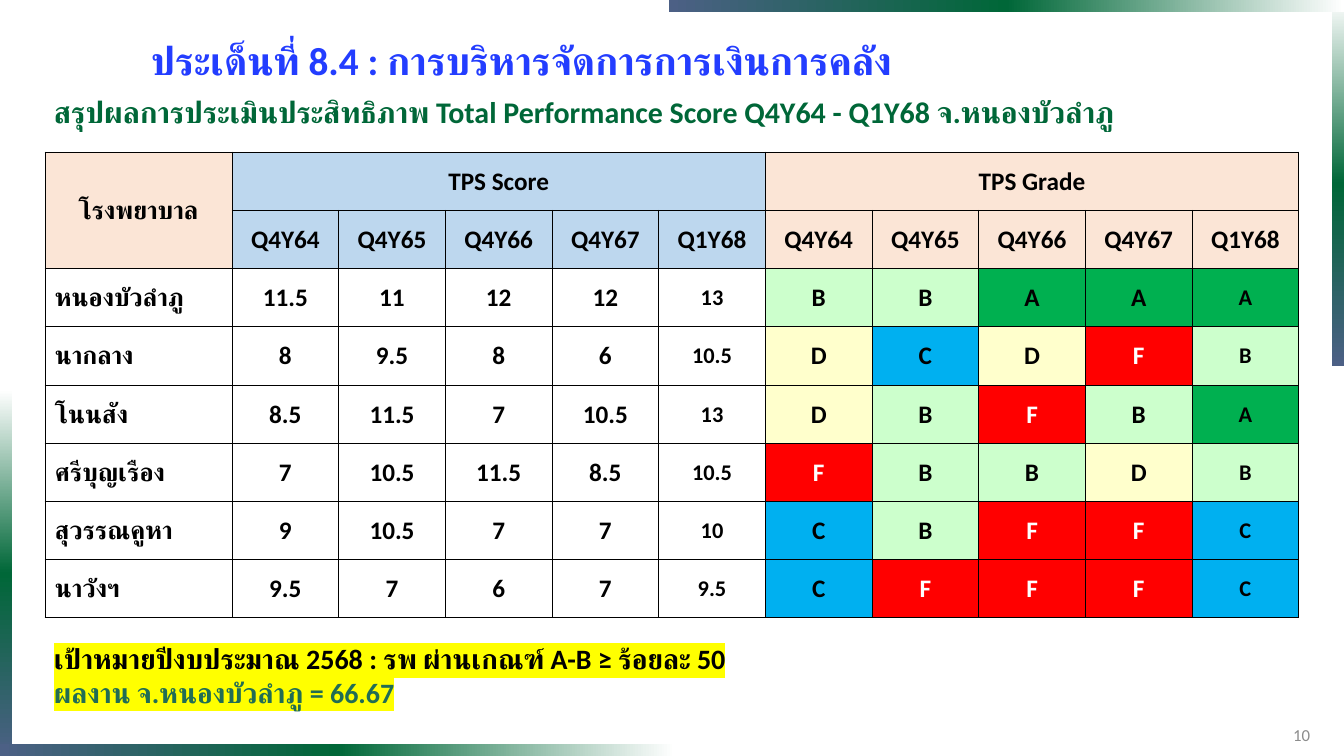
"""Builds the Total Performance Score slide with its grade table."""
from copy import deepcopy

from lxml import etree
from pptx import Presentation
from pptx.dml.color import RGBColor
from pptx.enum.shapes import MSO_SHAPE
from pptx.enum.text import MSO_ANCHOR, PP_ALIGN
from pptx.oxml.ns import qn
from pptx.util import Pt

RECT = MSO_SHAPE.RECTANGLE
TOP, MIDDLE = MSO_ANCHOR.TOP, MSO_ANCHOR.MIDDLE
LEFT, CENTER, RIGHT = PP_ALIGN.LEFT, PP_ALIGN.CENTER, PP_ALIGN.RIGHT

THEME = {
    "font": "Calibri",
    "title": "233DFF", "subtitle": "006738", "result": "216D54", "number": "8C8C8C",
    "black": "000000", "white": "FFFFFF", "highlight": "FFFF00",
    "score_head": "BDD7EE", "grade_head": "FBE5D6",
    "bar": ["FFFFFF", "006738", "4C6085"],
    "grades": {"A": "00B050", "B": "CCFFCC", "C": "00B0F0", "D": "FFFFCC", "F": "FF0000"},
    "title_size": 28, "subtitle_size": 21.4, "target_size": 20,
    "cell_size": 18, "latest_size": 16, "number_size": 12,
}
SLIDE_W, SLIDE_H = 1344, 756
SCALE = 12192000 / SLIDE_W


def px(n):
    return round(n * SCALE)


def add_run(p, text, size, color, bold=True, highlight=None):
    r = p.add_run()
    r.text = text
    r.font.size = Pt(size)
    r.font.bold = bold
    r.font.color.rgb = RGBColor.from_string(color)
    r.font.name = THEME["font"]
    rPr = r.font._element
    etree.SubElement(rPr, qn("a:cs"), typeface=THEME["font"])
    if highlight:
        hl = etree.Element(qn("a:highlight"))
        etree.SubElement(hl, qn("a:srgbClr"), val=highlight)
        rPr.find(qn("a:solidFill")).addnext(hl)


prs = Presentation()
prs.slide_width, prs.slide_height = px(SLIDE_W), px(SLIDE_H)
s = prs.slides.add_slide(prs.slide_layouts[6])

BAR, BAR_W, BAR_H = 12, 675, 366
bars = [
    (SLIDE_W - BAR, 0, BAR, BAR_H, 270),
    (SLIDE_W - BAR_W, 0, BAR_W, BAR, 180),
    (0, SLIDE_H - BAR_H, BAR, BAR_H, 270),
    (0, SLIDE_H - BAR, BAR_W, BAR, 180),
]
for x, y, w, h, angle in bars:
    sp = s.shapes.add_shape(RECT, px(x), px(y), px(w), px(h))
    sp.shadow.inherit = False
    sp.line.fill.background()
    sp.fill.gradient()
    sp.fill.gradient_angle = angle
    stops = sp._element.spPr.find(".//" + qn("a:gsLst"))
    stops.insert(1, deepcopy(stops[0]))
    for i, stop in enumerate(sp.fill.gradient_stops):
        stop.position = i / 2
        stop.color.rgb = RGBColor.from_string(THEME["bar"][i])

quarters = ["Q4Y64", "Q4Y65", "Q4Y66", "Q4Y67", "Q1Y68"]
hospitals = [
    ("หนองบัวลำภู", ["11.5", "11", "12", "12", "13"], "BBAAA"),
    ("นากลาง", ["8", "9.5", "8", "6", "10.5"], "DCDFB"),
    ("โนนสัง", ["8.5", "11.5", "7", "10.5", "13"], "DBFBA"),
    ("ศรีบุญเรือง", ["7", "10.5", "11.5", "8.5", "10.5"], "FBBDB"),
    ("สุวรรณคูหา", ["9", "10.5", "7", "7", "10"], "CBFFC"),
    ("นาวังฯ", ["9.5", "7", "6", "7", "9.5"], "CFFFC"),
]
n = len(quarters)
blank = [""] * (n - 1)
rows = [["โรงพยาบาล", "TPS Score", *blank, "TPS Grade", *blank], ["", *quarters, *quarters]]
rows += [[name, *scores, *grades] for name, scores, grades in hospitals]

NAME_W, QUARTERS_W, TABLE_H = 187, 1067, 466
table = s.shapes.add_table(len(rows), 2 * n + 1, px(45), px(152),
                           px(NAME_W + QUARTERS_W), px(TABLE_H)).table
table.first_row = table.horz_banding = False
for c, column in enumerate(table.columns):
    column.width = px(QUARTERS_W / (2 * n)) if c else px(NAME_W)
for row in table.rows:
    row.height = px(TABLE_H / len(rows))
table.cell(0, 0).merge(table.cell(1, 0))
table.cell(0, 1).merge(table.cell(0, n))
table.cell(0, n + 1).merge(table.cell(0, 2 * n))

for i, values in enumerate(rows):
    for c, text in enumerate(values):
        cell = table.cell(i, c)
        is_name = i > 1 and c == 0
        cell.vertical_anchor = MIDDLE
        cell.margin_left = px(10 if is_name else 1)
        cell.margin_top = cell.margin_right = px(1)
        cell.margin_bottom = 0
        if i < 2:
            fill = THEME["score_head"] if 1 <= c <= n else THEME["grade_head"]
        else:
            fill = THEME["grades"].get(text)
        if fill:
            cell.fill.solid()
            cell.fill.fore_color.rgb = RGBColor.from_string(fill)
        else:
            cell.fill.background()
        for k, side in enumerate(["a:lnL", "a:lnR", "a:lnT", "a:lnB"]):
            ln = etree.Element(qn(side), w=str(Pt(0.5)))
            line_fill = etree.SubElement(ln, qn("a:solidFill"))
            etree.SubElement(line_fill, qn("a:srgbClr"), val=THEME["black"])
            cell._tc.tcPr.insert(k, ln)
        if text:
            p = cell.text_frame.paragraphs[0]
            p.alignment = LEFT if is_name else CENTER
            size = THEME["latest_size" if i > 1 and c in (n, 2 * n) else "cell_size"]
            add_run(p, text, size, THEME["white" if text == "F" else "black"])

texts = [
    (44, 93, 1299, 86, TOP, LEFT, 0.9, THEME["subtitle_size"], True, None,
     [("สรุปผลการประเมินประสิทธิภาพ Total Performance Score Q4Y64 - Q1Y68 จ.หนองบัวลำภู",
       THEME["subtitle"])]),
    (141, -8, 1134, 88, TOP, LEFT, Pt(61.6), THEME["title_size"], True, None,
     [("ประเด็นที่ 8.4 : การบริหารจัดการการเงินการคลัง", THEME["title"])]),
    (44, 637, 873, 78, TOP, LEFT, None, THEME["target_size"], True, THEME["highlight"],
     [("เป้าหมายปีงบประมาณ 2568 : รพ ผ่านเกณฑ์ A-B ≥ ร้อยละ 50", THEME["black"]),
      ("ผลงาน จ.หนองบัวลำภู = 66.67", THEME["result"])]),
    (949, 715, 371, 40, MIDDLE, RIGHT, None, THEME["number_size"], False, None,
     [("10", THEME["number"])]),
]
for x, y, w, h, anchor, align, spacing, size, bold, highlight, lines in texts:
    tf = s.shapes.add_textbox(px(x), px(y), px(w), px(h)).text_frame
    tf.word_wrap = True
    tf.vertical_anchor = anchor
    for i, (text, color) in enumerate(lines):
        p = tf.add_paragraph() if i else tf.paragraphs[0]
        p.alignment = align
        p.line_spacing = spacing
        add_run(p, text, size, color, bold, highlight)

prs.save("out.pptx")
